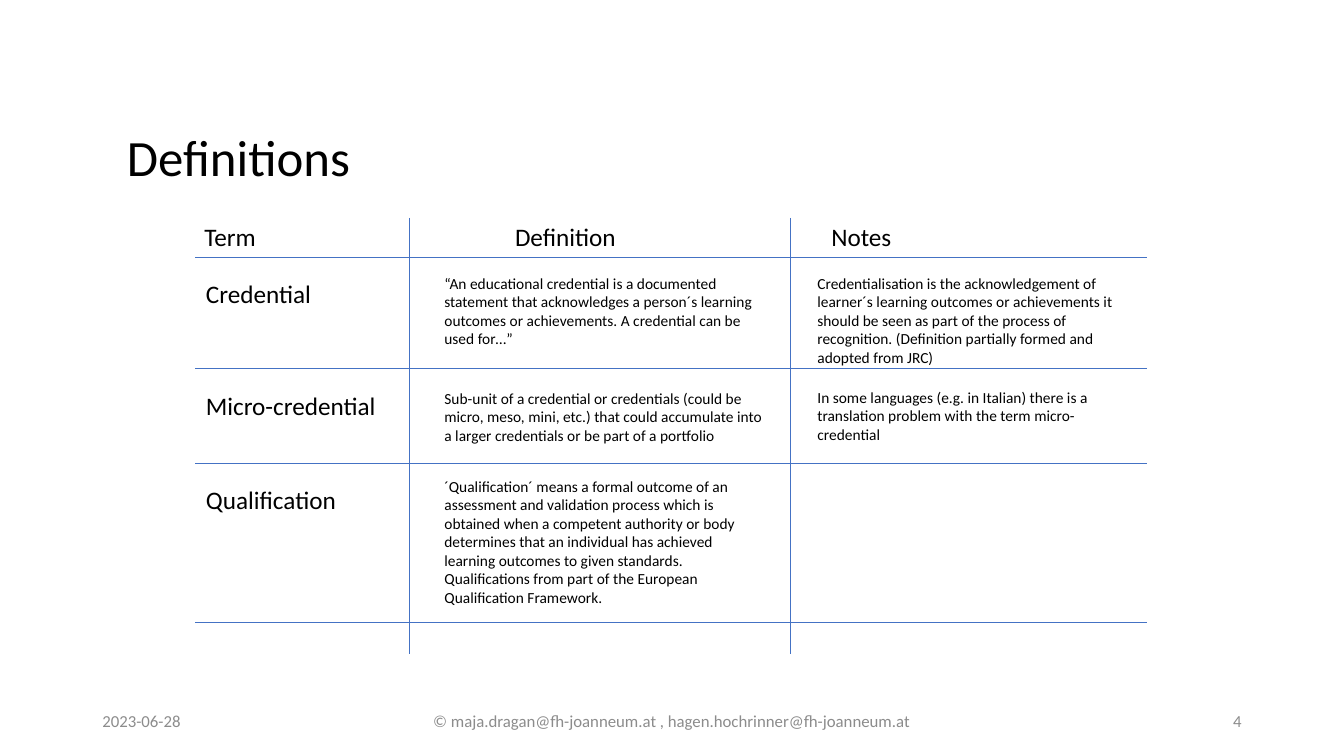
from dataclasses import dataclass

from lxml.etree import SubElement
from pptx import Presentation
from pptx.dml.color import RGBColor
from pptx.enum.shapes import MSO_CONNECTOR as Link
from pptx.enum.text import MSO_ANCHOR as Anchor, MSO_AUTO_SIZE as Fit, PP_ALIGN as Align
from pptx.oxml.ns import qn
from pptx.slide import Slide
from pptx.util import Cm, Pt

FONT = "Calibri"
BLACK, GREY, BLUE = "000000", "8C8C8C", "4472C4"

# Grid of the definitions, in cm
LEFT, RIGHT, TOP, BASE = 4.92, 28.91, 5.49, 16.48
ROWS = (6.48, 9.27, 11.68, 15.67)
COLS = (10.31, 19.91)
TERM_X, DEF_X, NOTE_X = 4.94, 10.95, 20.35
TEXT_W, LABEL_H = 8.56, 1.02


@dataclass
class Label:
    text: str
    x: float
    y: float
    w: float
    h: float = LABEL_H
    size: float = 18
    color: str = BLACK
    align: Align = Align.LEFT
    anchor: Anchor = Anchor.TOP
    wrap: bool = False
    grow: bool = True
    space: float = 1.0


@dataclass
class Line:
    x1: float
    y1: float
    x2: float
    y2: float


def paint(code: str) -> RGBColor:
    return RGBColor.from_string(code)


def body(text: str, x: float, y: float, h: float) -> Label:
    return Label(text, x, y, TEXT_W, h, size=11, wrap=True)


def footer(text: str, x: float, w: float, align: Align) -> Label:
    return Label(text, x, 17.65, w, size=12, color=GREY, align=align,
                 anchor=Anchor.MIDDLE, wrap=True, grow=False)


def draw_label(slide: Slide, label: Label) -> None:
    box = slide.shapes.add_textbox(Cm(label.x), Cm(label.y), Cm(label.w), Cm(label.h))
    frame = box.text_frame
    frame.text = label.text
    frame.word_wrap = label.wrap
    frame.auto_size = Fit.SHAPE_TO_FIT_TEXT if label.grow else Fit.NONE
    frame.vertical_anchor = label.anchor
    para = frame.paragraphs[0]
    para.alignment = label.align
    para.line_spacing = label.space
    font = para.runs[0].font
    font.name, font.size = FONT, Pt(label.size)
    font.color.rgb = paint(label.color)


def draw_line(slide: Slide, line: Line) -> None:
    rule = slide.shapes.add_connector(
        Link.STRAIGHT, Cm(line.x1), Cm(line.y1), Cm(line.x2), Cm(line.y2))
    rule.line.color.rgb = paint(BLUE)
    rule.line.width = Pt(0.5)
    SubElement(rule._element.spPr, qn("a:effectLst"))


LABELS = [
    # Title
    Label("Definitions", 2.95, 3.45, 23.9, 1.47, size=36.3, wrap=True,
          grow=False, space=0.7),
    # Column heads
    Label("Term", 4.9, 5.46, 1.83),
    Label("Definition", 12.73, 5.46, 3.1),
    Label("Notes", 20.7, 5.46, 2.03),
    # Terms
    Label("Credential", TERM_X, 6.88, 3.2),
    Label("Micro-credential", TERM_X, 9.7, 4.85),
    Label("Qualification", TERM_X, 12.09, 3.99),
    # Definitions
    body("“An educational credential is a documented statement that acknowledges "
         "a person´s learning outcomes or achievements. A credential can be used "
         "for…”", DEF_X, 6.78, 2.13),
    body("Sub-unit of a credential or credentials (could be micro, meso, mini, "
         "etc.) that could accumulate into a larger credentials or be part of a "
         "portfolio", DEF_X, 9.68, 1.68),
    body("´Qualification´ means a formal outcome of an assessment and validation "
         "process which is obtained when a competent authority or body determines "
         "that an individual has achieved learning outcomes to given standards. "
         "Qualifications from part of the European Qualification Framework.",
         DEF_X, 11.89, 3.56),
    # Notes
    body("Credentialisation is the acknowledgement of learner´s learning outcomes "
         "or achievements it should be seen as part of the process of recognition. "
         "(Definition partially formed and adopted from JRC)", NOTE_X, 6.78, 2.62),
    body("In some languages (e.g. in Italian) there is a translation problem with "
         "the term micro-credential", NOTE_X, 9.65, 1.68),
    # Footer
    footer("2023-06-28", 2.33, 7.62, Align.LEFT),
    footer("© maja.dragan@fh-joanneum.at , hagen.hochrinner@fh-joanneum.at",
           9.58, 14.7, Align.CENTER),
    footer("4", 23.92, 7.62, Align.RIGHT),
]

LINES = [Line(LEFT, y, RIGHT, y) for y in ROWS] + [Line(x, TOP, x, BASE) for x in COLS]


def main() -> None:
    deck = Presentation()
    deck.slide_width, deck.slide_height = Cm(33.87), Cm(19.05)
    slide = deck.slides.add_slide(deck.slide_layouts[6])
    for line in LINES:
        draw_line(slide, line)
    for label in LABELS:
        draw_label(slide, label)
    deck.save("out.pptx")


if __name__ == "__main__":
    main()
